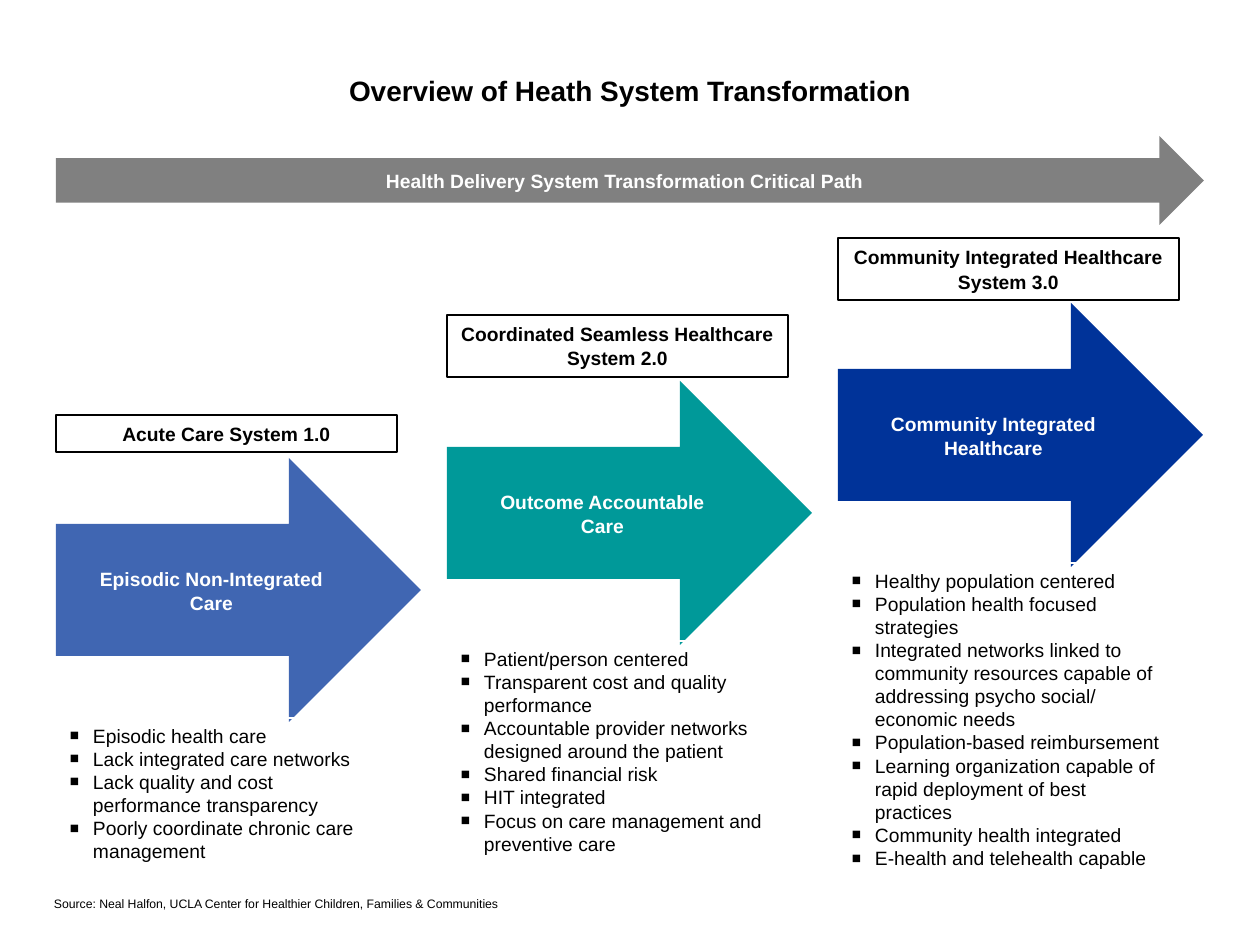
import pptx
import pptx.dml.color
import pptx.enum.shapes
import pptx.enum.text
import pptx.oxml
import pptx.oxml.ns
import pptx.util

SCALE = 914400 / 126
SHAPES = pptx.enum.shapes.MSO_SHAPE
ANCHORS = pptx.enum.text.MSO_ANCHOR
ALIGNS = pptx.enum.text.PP_ALIGN


def color(value):
    return pptx.dml.color.RGBColor.from_string(value)


def add_block(kind, box, lines, fill=None, outline=None, font_color="000000",
              size=11, bold=True, anchor=ANCHORS.TOP, align=ALIGNS.CENTER,
              spacing=1.06, margins=(13, 6, 13, 6), bullet=False):
    left, top, width, height = [round(value * SCALE) for value in box]
    if kind is None:
        shape = slide.shapes.add_textbox(left, top, width, height)
    else:
        shape = slide.shapes.add_shape(kind, left, top, width, height)
        shape.shadow.inherit = False
    if fill:
        shape.fill.solid()
        shape.fill.fore_color.rgb = color(fill)
    else:
        shape.fill.background()
    if outline:
        shape.line.color.rgb = color(outline)
        shape.line.width = pptx.util.Pt(0.75)
    else:
        shape.line.fill.background()
    frame = shape.text_frame
    frame_format = {"word_wrap": True, "vertical_anchor": anchor}
    for side, margin in zip(("left", "top", "right", "bottom"), margins):
        frame_format["margin_" + side] = round(margin * SCALE)
    for name, value in frame_format.items():
        setattr(frame, name, value)
    font_format = {"name": "Arial", "size": pptx.util.Pt(size), "bold": bold}
    for index, line in enumerate(lines):
        paragraph = frame.add_paragraph() if index else frame.paragraphs[0]
        paragraph.text = line
        paragraph.alignment = align
        paragraph.line_spacing = spacing
        if bullet:
            properties = paragraph._p.get_or_add_pPr()
            properties.set("marL", str(round(24 * SCALE)))
            properties.set("indent", str(round(-23 * SCALE)))
            for tag in ('buClr><a:srgbClr val="000000"/></a:buClr',
                        'buSzPct val="80000"/',
                        'buFont typeface="Arial"/',
                        'buChar char="■"/'):
                properties.append(pptx.oxml.parse_xml(
                    f"<a:{tag}>".replace(
                        " ", f" {pptx.oxml.ns.nsdecls('a')} ", 1)
                    if not tag.startswith("buClr") else
                    f"<a:{tag}>".replace(
                        "buClr>", f"buClr {pptx.oxml.ns.nsdecls('a')}>", 1)))
        for run in paragraph.runs:
            for name, value in font_format.items():
                setattr(run.font, name, value)
            run.font.color.rgb = color(font_color)


presentation = pptx.Presentation()
presentation.slide_width = round(1260 * SCALE)
presentation.slide_height = round(945 * SCALE)
slide = presentation.slides.add_slide(presentation.slide_layouts[6])

arrow_format = {"font_color": "FFFFFF", "anchor": ANCHORS.MIDDLE,
                "margins": (25, 6, 13, 6)}
label_format = {"outline": "000000"}
list_format = {"outline": "FFFFFF", "bold": False, "align": ALIGNS.LEFT,
               "spacing": 1.0, "bullet": True}

add_block(None, (55, 73, 1150, 34), ["Overview of Heath System Transformation"],
          size=16, anchor=ANCHORS.BOTTOM, margins=(0, 0, 0, 0))
add_block(SHAPES.RIGHT_ARROW, (56, 136, 1148, 89),
          ["Health Delivery System Transformation Critical Path"],
          fill="808080", **arrow_format)

stages = [
    ("4066B2", 458, 415, 37, 152, "Acute Care System 1.0",
     ["Episodic Non-Integrated Care"],
     ["Episodic health care",
      "Lack integrated care networks",
      "Lack quality and cost performance transparency",
      "Poorly coordinate chronic care management"]),
    ("009999", 381, 315, 62, 223, "Coordinated Seamless Healthcare System 2.0",
     ["Outcome Accountable", "Care"],
     ["Patient/person centered",
      "Transparent cost and quality performance",
      "Accountable provider networks designed around the patient",
      "Shared financial risk",
      "HIT integrated",
      "Focus on care management and preventive care"]),
    ("003399", 303, 238, 62, 316, "Community Integrated Healthcare System 3.0",
     ["Community Integrated Healthcare"],
     ["Healthy population centered",
      "Population health focused strategies",
      "Integrated networks linked to community resources capable of "
      "addressing psycho social/ economic needs",
      "Population-based reimbursement",
      "Learning organization capable of rapid deployment of best practices",
      "Community health integrated",
      "E-health and telehealth capable"]),
]
for index, stage in enumerate(stages):
    fill, arrow_top, label_top, label_height, list_height, label, care, points = stage
    left = 56 + 391 * index
    add_block(SHAPES.RIGHT_ARROW, (left, arrow_top, 365, 264), care,
              fill=fill, **arrow_format)
    add_block(SHAPES.RECTANGLE, (left, label_top, 341, label_height), [label],
              **label_format)
    add_block(SHAPES.RECTANGLE, (left, arrow_top + 260, 341, list_height), points,
              **list_format)

add_block(None, (54, 896, 552, 15),
          ["Source: Neal Halfon, UCLA Center for Healthier Children, "
           "Families & Communities"],
          size=7, bold=False, anchor=ANCHORS.BOTTOM, align=ALIGNS.LEFT,
          spacing=1.0, margins=(0, 0, 0, 0))

presentation.save("out.pptx")
